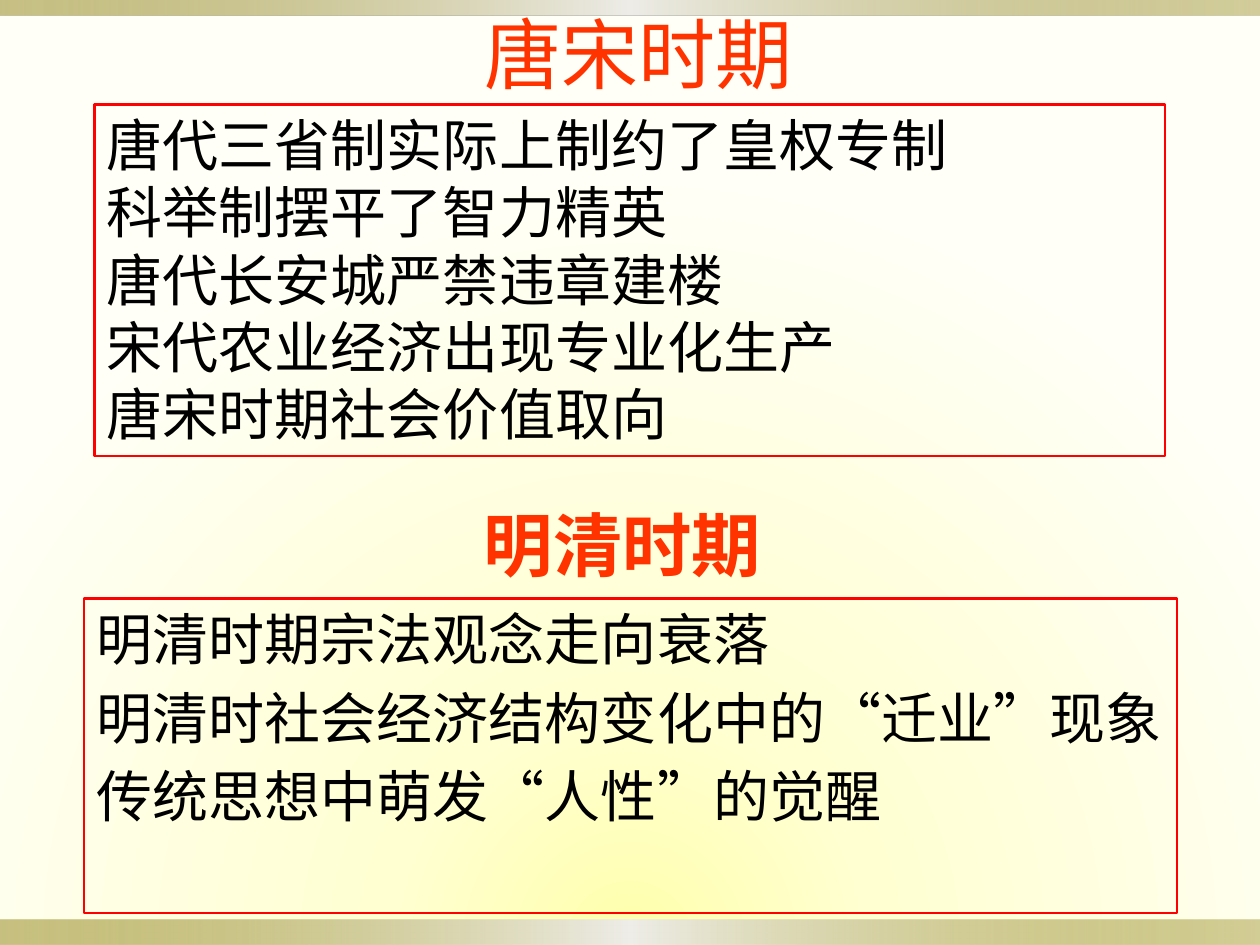
from dataclasses import dataclass

from lxml import etree
from pptx import Presentation
from pptx.dml.color import RGBColor
from pptx.enum.lang import MSO_LANGUAGE_ID as Lang
from pptx.enum.shapes import MSO_SHAPE as Shape
from pptx.enum.text import MSO_ANCHOR as Anchor, MSO_AUTO_SIZE as AutoSize, PP_ALIGN as Align
from pptx.oxml.ns import qn
from pptx.util import Pt


@dataclass(frozen=True)
class Theme:
    heading: str = "FF3300"
    body: str = "000000"
    frame: str = "FF0000"
    cjk: str = "Noto Sans CJK SC"
    latin: str = "Karla"
    top_size: float = 44
    lower_size: float = 39.6
    body_size: float = 32
    frame_width: float = 1.25
    glow: tuple = ((0, "FFFFAC", 100), (31, "FFFFD2", 100), (100, "FFFFF7", 100))
    band: tuple = ((0, "918415", 50), (50, "EEEDE8", 100), (100, "918415", 40))


THEME = Theme()


def set_gradient(fill, parent, stops, direction, **attributes):
    fill.gradient()
    gradient = next(parent.iter(qn("a:gradFill")))
    for child in list(gradient):
        gradient.remove(child)
    stop_list = etree.SubElement(gradient, qn("a:gsLst"))
    for position, color, opacity in stops:
        stop = etree.SubElement(stop_list, qn("a:gs"), pos=str(position * 1000))
        tone = etree.SubElement(stop, qn("a:srgbClr"), val=color)
        if opacity < 100:
            etree.SubElement(tone, qn("a:alpha"), val=str(opacity * 1000))
    return etree.SubElement(gradient, qn(direction), **attributes)


def paint_background(slide):
    glow = set_gradient(slide.background.fill, slide.element, THEME.glow, "a:path", path="circle")
    etree.SubElement(glow, qn("a:fillToRect"), l="50000", t="150000", r="50000", b="0")


def add_band(slide, box):
    band = slide.shapes.add_shape(Shape.RECTANGLE, *map(Pt, box))
    band.shadow.inherit = False
    band.line.fill.background()
    set_gradient(band.fill, band.element, THEME.band, "a:lin", ang="0", scaled="0")


def write_lines(frame, lines, size, color, font=THEME.cjk, bold=False, align=Align.LEFT, gap=0):
    for index, line in enumerate(lines):
        paragraph = frame.paragraphs[0] if index == 0 else frame.add_paragraph()
        paragraph.alignment = align
        if index and gap:
            paragraph.space_before = Pt(gap)
        run = paragraph.add_run()
        run.text = line
        style = {"size": Pt(size), "bold": bold, "name": font, "language_id": Lang.SIMPLIFIED_CHINESE}
        for key, value in style.items():
            setattr(run.font, key, value)
        run.font.color.rgb = RGBColor.from_string(color)
        latin = run.font._element.find(qn("a:latin"))
        latin.addnext(etree.Element(qn("a:ea"), typeface=THEME.cjk))


def add_heading(slide, box, text, size, wrap=False, anchor=Anchor.TOP, **style):
    heading = slide.shapes.add_textbox(*map(Pt, box)).text_frame
    layout = {"word_wrap": wrap, "vertical_anchor": anchor, "auto_size": AutoSize.NONE}
    for key, value in layout.items():
        setattr(heading, key, value)
    write_lines(heading, [text], size, THEME.heading, **style)


def add_points(slide, box, points, gap=0):
    panel = slide.shapes.add_shape(Shape.RECTANGLE, *map(Pt, box))
    panel.shadow.inherit = False
    panel.fill.background()
    panel.line.color.rgb = RGBColor.from_string(THEME.frame)
    panel.line.width = Pt(THEME.frame_width)
    panel.text_frame.word_wrap = True
    panel.text_frame.vertical_anchor = Anchor.TOP
    write_lines(panel.text_frame, points, THEME.body_size, THEME.body, gap=gap)


def main():
    deck = Presentation()
    deck.slide_width, deck.slide_height = Pt(720), Pt(540)
    slide = deck.slides.add_slide(deck.slide_layouts[6])
    paint_background(slide)
    for band_box in ((0, 525.6, 720, 14.4), (0, 0, 720, 8.64)):
        add_band(slide, band_box)

    add_heading(slide, (270, 0, 192.96, 60.48), "唐宋时期", THEME.top_size)
    add_points(slide, (54, 59.76, 612, 200.88), [
        "唐代三省制实际上制约了皇权专制",
        "科举制摆平了智力精英",
        "唐代长安城严禁违章建楼",
        "宋代农业经济出现专业化生产",
        "唐宋时期社会价值取向",
    ])

    add_heading(slide, (126, 288, 459.36, 45.36), "明清时期", THEME.lower_size, wrap=True,
                anchor=Anchor.MIDDLE, font=THEME.latin, bold=True, align=Align.CENTER)
    add_points(slide, (48.24, 342, 624.24, 180), [
        "明清时期宗法观念走向衰落",
        "明清时社会经济结构变化中的“迁业”现象",
        "传统思想中萌发“人性”的觉醒",
    ], gap=THEME.body_size * 0.2)

    deck.save("out.pptx")


if __name__ == "__main__":
    main()
